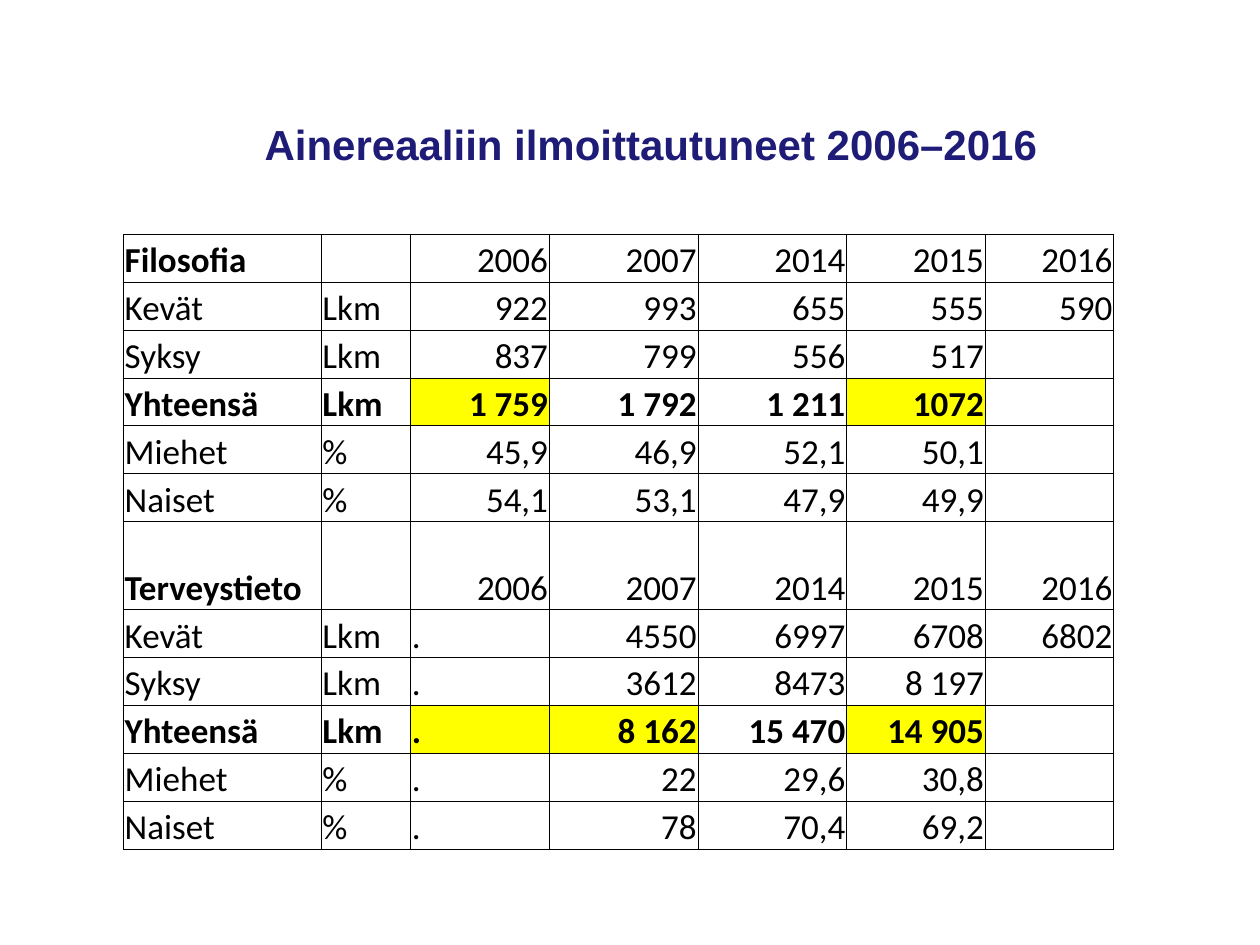
import pptx
import pptx.dml.color
import pptx.enum.text
import pptx.oxml
import pptx.oxml.ns
import pptx.util
import lxml.etree

COLORS = {"title": "1E1C77", "text": "000000", "border": "000000", "highlight": "FFFF00"}
YEARS = ["2006", "2007", "2014", "2015", "2016"]
SUBJECTS = [
    ["Filosofia", "", *YEARS],
    ["Kevät", "Lkm", "922", "993", "655", "555", "590"],
    ["Syksy", "Lkm", "837", "799", "556", "517", ""],
    ["Yhteensä", "Lkm", "1 759", "1 792", "1 211", "1072", ""],
    ["Miehet", "%", "45,9", "46,9", "52,1", "50,1", ""],
    ["Naiset", "%", "54,1", "53,1", "47,9", "49,9", ""],
    ["Terveystieto", "", *YEARS],
    ["Kevät", "Lkm", ".", "4550", "6997", "6708", "6802"],
    ["Syksy", "Lkm", ".", "3612", "8473", "8 197", ""],
    ["Yhteensä", "Lkm", ".", "8 162", "15 470", "14 905", ""],
    ["Miehet", "%", ".", "22", "29,6", "30,8", ""],
    ["Naiset", "%", ".", "78", "70,4", "69,2", ""],
]
HIGHLIGHTED = {"1 759", "1072", "8 162", "14 905"}
COLUMN_SHARES = [0.157, 0.071, 0.11, 0.118, 0.118, 0.11, 0.102]
SECOND_SUBJECT = 6
ROW_SHARES = [0.0933 if row == SECOND_SUBJECT else 0.0507 for row in range(len(SUBJECTS))]


class SlideStyle:
    def __init__(self, deck):
        self.deck = deck
        self.slide = deck.slides.add_slide(deck.slide_layouts[5])

    def across(self, share):
        return round(self.deck.slide_width * share)

    def down(self, share):
        return round(self.deck.slide_height * share)

    def font(self, paragraph, name, size, color, bold):
        paragraph.font.name = name
        paragraph.font.size = pptx.util.Pt(size)
        paragraph.font.bold = bold
        paragraph.font.color.rgb = pptx.dml.color.RGBColor.from_string(COLORS[color])

    def title(self, text, left, top, width, height):
        heading = self.slide.shapes.title
        heading.left, heading.top = self.across(left), self.down(top)
        heading.width, heading.height = self.across(width), self.down(height)
        heading.text_frame.text = text
        heading.text_frame.vertical_anchor = pptx.enum.text.MSO_ANCHOR.BOTTOM
        paragraph = heading.text_frame.paragraphs[0]
        paragraph.alignment = pptx.enum.text.PP_ALIGN.LEFT
        paragraph.line_spacing = pptx.util.Pt(30)
        self.font(paragraph, "Arial", 24, "title", True)

    def borders(self, cell):
        properties = cell._tc.get_or_add_tcPr()
        for position, side in enumerate(["lnL", "lnR", "lnT", "lnB"]):
            line = pptx.oxml.parse_xml(
                f'<a:{side} {pptx.oxml.ns.nsdecls("a")} w="{pptx.util.Pt(0.5)}"><a:solidFill>'
                f'<a:srgbClr val="{COLORS["border"]}"/></a:solidFill></a:{side}>')
            properties.insert(position, line)

    def cell(self, cell, text, bold, numeric, highlighted):
        cell.margin_left = cell.margin_right = cell.margin_top = pptx.util.Inches(0.01)
        cell.margin_bottom = 0
        cell.vertical_anchor = pptx.enum.text.MSO_ANCHOR.BOTTOM
        cell.text = text
        paragraph = cell.text_frame.paragraphs[0]
        align = pptx.enum.text.PP_ALIGN
        paragraph.alignment = align.RIGHT if numeric else align.LEFT
        self.font(paragraph, "Calibri", 20, "text", bold)
        if highlighted:
            cell.fill.solid()
            cell.fill.fore_color.rgb = pptx.dml.color.RGBColor.from_string(COLORS["highlight"])
        else:
            cell.fill.background()
        self.borders(cell)

    def table(self, rows, left, top, column_shares, row_shares):
        table = self.slide.shapes.add_table(
            len(rows), len(column_shares), self.across(left), self.down(top),
            self.across(sum(column_shares)), self.down(sum(row_shares))).table
        table.first_row = table.horz_banding = False
        for column, share in zip(table.columns, column_shares):
            column.width = self.across(share)
        for row, share, values in zip(table.rows, row_shares, rows):
            row.height = self.down(share)
            total = values[0] == "Yhteensä"
            for index, (cell, value) in enumerate(zip(row.cells, values)):
                subject = index == 0 and not values[1]
                missing = value == "."
                self.cell(cell, value, total or subject, index > 1 and not missing,
                          value in HIGHLIGHTED or (total and missing))


def main():
    deck = pptx.Presentation()
    deck.slide_width, deck.slide_height = pptx.util.Inches(10), pptx.util.Inches(7.5)
    enrolment = SlideStyle(deck)
    enrolment.title("Ainereaaliin ilmoittautuneet 2006–2016", 0.2, 0.02, 0.77, 0.165)
    enrolment.table(SUBJECTS, 0.098, 0.248, COLUMN_SHARES, ROW_SHARES)
    deck.save("out.pptx")


if __name__ == "__main__":
    main()
